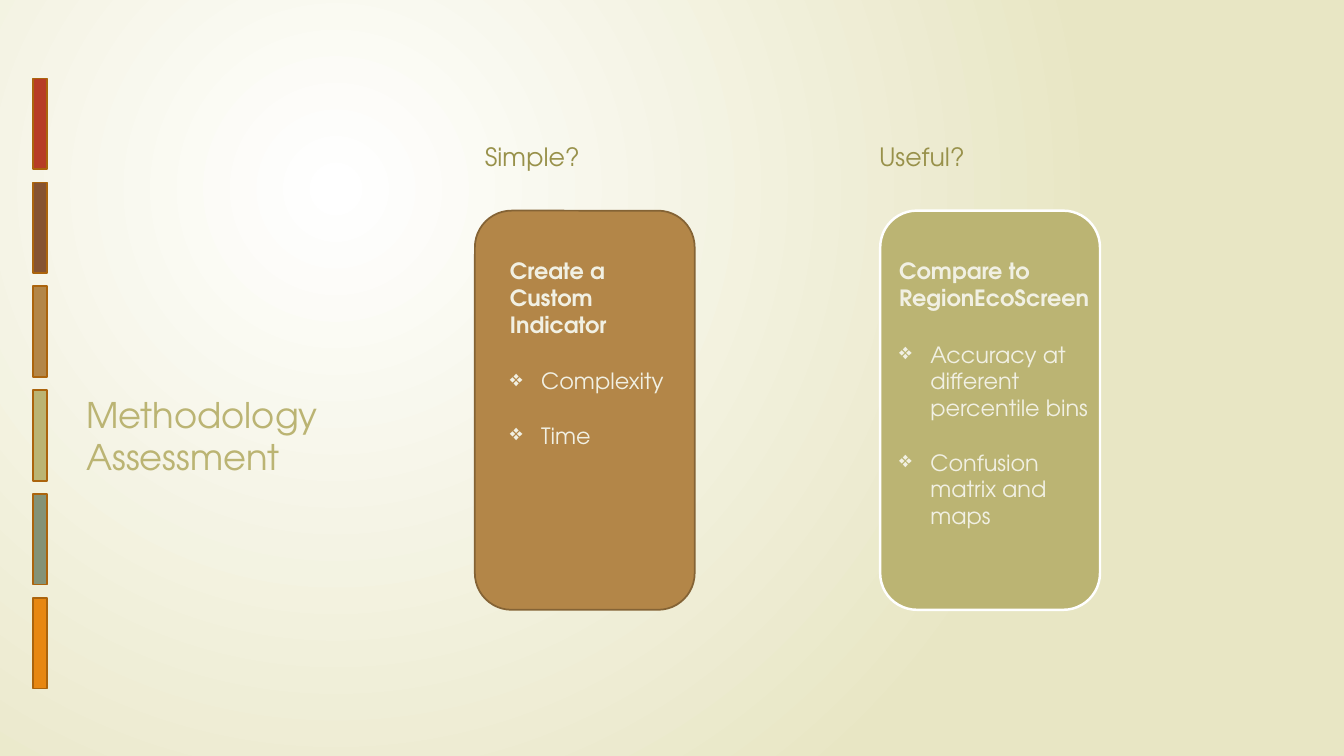
from lxml.etree import SubElement
from pptx import Presentation
from pptx.dml.color import RGBColor
from pptx.enum.shapes import MSO_SHAPE
from pptx.enum.text import MSO_ANCHOR
from pptx.oxml.ns import qn
from pptx.util import Inches, Pt

FONT = "TeX Gyre Adventor"
WHITE = RGBColor(0xFF, 0xFF, 0xFF)
CREAM = RGBColor(0xE8, 0xE6, 0xC4)
PALE = RGBColor(0xF1, 0xF0, 0xE3)
RED = RGBColor(0xB7, 0x3C, 0x26)
BROWN = RGBColor(0x86, 0x53, 0x31)
TAN = RGBColor(0xB3, 0x86, 0x48)
OLIVE = RGBColor(0xBB, 0xB4, 0x73)
SAGE = RGBColor(0x84, 0x92, 0x76)
ORANGE = RGBColor(0xE7, 0x87, 0x12)
BAR_EDGE = RGBColor(0xAB, 0x64, 0x0D)
TAN_EDGE = RGBColor(0x84, 0x63, 0x35)
LABEL = RGBColor(0x98, 0x91, 0x4A)

TITLE = "Methodology\vAssessment"
BARS = [RED, BROWN, TAN, OLIVE, SAGE, ORANGE]
CARDS = [
    {"label": "Simple?", "label_x": 4.71, "x": 4.71, "text_x": 4.96, "text_w": 1.86,
     "fill": TAN, "edge": TAN_EDGE, "edge_pt": 1.25,
     "heading": "Create a Custom Indicator", "points": ["Complexity", "Time"]},
    {"label": "Useful?", "label_x": 8.62, "x": 8.73, "text_x": 8.82, "text_w": 2.1,
     "fill": OLIVE, "edge": WHITE, "edge_pt": 1.75,
     "heading": "Compare to RegionEcoScreen",
     "points": ["Accuracy at different percentile bins", "Confusion matrix and maps"]},
]
BAR_TOP, BAR_STEP = 0.78, 1.03
POINT_GAPS = [21.5, 19.5]
INDENT = Inches(0.31)


def add_box(s, kind, x, y, w, h, fill, edge, edge_pt):
    sp = s.shapes.add_shape(kind, Inches(x), Inches(y), Inches(w), Inches(h))
    sp.shadow.inherit = False
    sp.fill.solid()
    sp.fill.fore_color.rgb = fill
    sp.line.color.rgb = edge
    sp.line.width = Pt(edge_pt)


def add_text(s, x, y, w, h, lines, size, color):
    tf = s.shapes.add_textbox(Inches(x), Inches(y), Inches(w), Inches(h)).text_frame
    tf.word_wrap = True
    tf.text = "\n".join(lines)
    for p in tf.paragraphs:
        for r in p.runs:
            r.font.name = FONT
            r.font.size = Pt(size)
            r.font.color.rgb = color
    return tf


def add_bullet(p):
    pPr = p._p.get_or_add_pPr()
    pPr.set("marL", str(INDENT))
    pPr.set("indent", str(-INDENT))
    SubElement(pPr, qn("a:buChar"), char="❖")


def paint_background(s):
    fill = s.background.fill
    fill.gradient()
    for stop, color in zip(fill.gradient_stops, (WHITE, CREAM)):
        stop.color.rgb = color
    grad = s._element.find(".//" + qn("a:gradFill"))
    grad.remove(grad.find(qn("a:lin")))
    circle = SubElement(grad, qn("a:path"), {"path": "circle"})
    SubElement(circle, qn("a:fillToRect"), l="50000", t="50000", r="100000", b="100000")


def main():
    prs = Presentation()
    prs.slide_width, prs.slide_height = Inches(13.33), Inches(7.5)
    s = prs.slides.add_slide(prs.slide_layouts[6])
    paint_background(s)

    tf = add_text(s, 0.76, 3.95, 2.78, 0.84, [TITLE], 25.2, OLIVE)
    tf.vertical_anchor = MSO_ANCHOR.BOTTOM

    for i, color in enumerate(BARS):
        add_box(s, MSO_SHAPE.RECTANGLE, 0.33, BAR_TOP + i * BAR_STEP, 0.14, 0.9,
                color, BAR_EDGE, 1.25)

    for card in CARDS:
        add_text(s, card["label_x"], 1.35, 1.97, 0.4, [card["label"]], 18, LABEL)
        add_box(s, MSO_SHAPE.ROUNDED_RECTANGLE, card["x"], 2.09, 2.18, 3.96,
                card["fill"], card["edge"], card["edge_pt"])
        tf = add_text(s, card["text_x"], 2.5, card["text_w"], 2.83,
                      [card["heading"], *card["points"]], 16, PALE)
        heading, *points = tf.paragraphs
        heading.runs[0].font.bold = True
        for p, gap in zip(points, POINT_GAPS):
            p.space_before = Pt(gap)
            add_bullet(p)

    prs.save("out.pptx")


if __name__ == "__main__":
    main()
